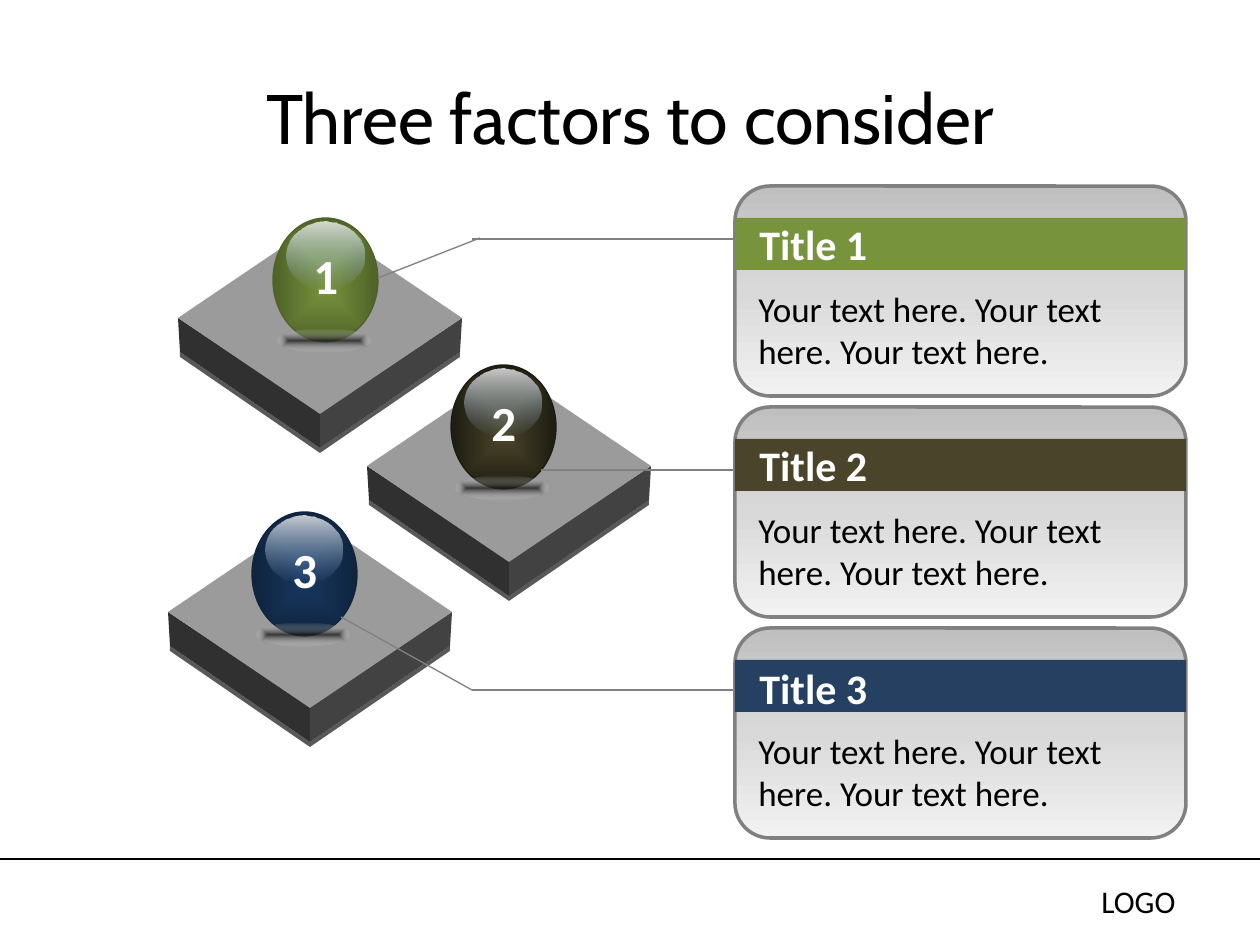
from dataclasses import dataclass

from lxml import etree
from pptx import Presentation
from pptx.dml.color import RGBColor
from pptx.enum.shapes import MSO_CONNECTOR, MSO_SHAPE
from pptx.enum.text import MSO_ANCHOR, MSO_AUTO_SIZE, PP_ALIGN
from pptx.oxml import parse_xml
from pptx.oxml.ns import nsdecls, qn
from pptx.util import Pt

STRAIGHT = MSO_CONNECTOR.STRAIGHT
DIAMOND, OVAL = MSO_SHAPE.DIAMOND, MSO_SHAPE.OVAL
RECTANGLE, ROUNDED = MSO_SHAPE.RECTANGLE, MSO_SHAPE.ROUNDED_RECTANGLE
LEFT, CENTER = PP_ALIGN.LEFT, PP_ALIGN.CENTER
TOP, MIDDLE = MSO_ANCHOR.TOP, MSO_ANCHOR.MIDDLE
FIT_SHAPE, NO_FIT = MSO_AUTO_SIZE.SHAPE_TO_FIT_TEXT, MSO_AUTO_SIZE.NONE
PX = 914400 / 126


@dataclass(frozen=True)
class Theme:
    black: str = "000000"
    white: str = "FFFFFF"
    gray: str = "808080"
    tile_top: str = "9B9B9B"
    tile_left: str = "303030"
    tile_right: str = "424242"
    tile_lip: str = "595959"
    card: tuple = ((0, "BFBFBF", 100), (50, "D9D9D9", 100), (100, "F2F2F2", 100))
    gloss: tuple = ((0, "FFFFFF", 77), (100, "8EB4E3", 0))
    contact: tuple = ((0, "171717", 76), (100, "FFFFFF", 0))
    heading_font: str = "Cabin"
    body_font: str = "Calibri"
    title_size: int = 40
    number_size: int = 28
    heading_size: int = 24
    body_size: int = 20
    footer_size: int = 18


theme = Theme()


def write_text(shape, text, size, color=theme.black, font=theme.body_font,
               bold=False, align=LEFT, anchor=TOP, wrap=True, fit=FIT_SHAPE):
    frame = shape.text_frame
    frame.word_wrap = wrap
    frame.auto_size = fit
    frame.vertical_anchor = anchor
    paragraph = frame.paragraphs[0]
    paragraph.alignment = align
    run = paragraph.add_run()
    run.text = text
    run.font.name = font
    run.font.size = Pt(size)
    run.font.bold = bold
    run.font.color.rgb = RGBColor.from_string(color)


def paint(shape, fill, line=None, line_width=0.75, radial=False):
    shape.shadow.inherit = False
    if isinstance(fill, str):
        shape.fill.solid()
        shape.fill.fore_color.rgb = RGBColor.from_string(fill)
    else:
        stops = "".join(
            f'<a:gs pos="{position * 1000}"><a:srgbClr val="{color}">'
            f'<a:alpha val="{alpha * 1000}"/></a:srgbClr></a:gs>'
            for position, color, alpha in fill)
        direction = '<a:lin ang="5400000" scaled="0"/>'
        if radial:
            direction = ('<a:path path="shape"><a:fillToRect l="50000" t="50000" '
                         'r="50000" b="50000"/></a:path>')
        shape.fill.background()
        properties = shape._element.spPr
        properties.replace(properties.find(qn("a:noFill")), parse_xml(
            f'<a:gradFill {nsdecls("a")} rotWithShape="1">'
            f'<a:gsLst>{stops}</a:gsLst>{direction}</a:gradFill>'))
    if line:
        shape.line.color.rgb = RGBColor.from_string(line)
        shape.line.width = Pt(line_width)
    else:
        shape.line.fill.background()


presentation = Presentation()
presentation.slide_width = round(1260 * PX)
presentation.slide_height = round(945 * PX)
slide = presentation.slides.add_slide(presentation.slide_layouts[5])
shapes = slide.shapes

title = shapes.title
title.left, title.top, title.width, title.height = [
    round(length * PX) for length in (63, 38, 1134, 157)]
write_text(title, "Three factors to consider", theme.title_size,
           font=theme.heading_font, align=CENTER, anchor=MIDDLE, fit=NO_FIT)

footer = shapes.add_textbox(*[round(length * PX) for length in (1089, 876, 140, 50)])
write_text(footer, "LOGO", theme.footer_size)

tile_faces = [
    (theme.tile_lip, [(-140, 34), (0, 130), (140, 34), (140, 39), (0, 135), (-140, 39)]),
    (theme.tile_left, [(-142, 0), (0, 95), (0, 130), (-140, 34)]),
    (theme.tile_right, [(142, 0), (0, 95), (0, 130), (140, 34)]),
]
for center_x, center_y in [(310, 612), (509, 466), (320, 318)]:
    for color, offsets in tile_faces:
        points = [(round((center_x + x) * PX), round((center_y + y) * PX))
                  for x, y in offsets]
        builder = shapes.build_freeform(*points[0], scale=1.0)
        builder.add_line_segments(points[1:], close=True)
        paint(builder.convert_to_shape(), color)
    tile = shapes.add_shape(DIAMOND, *[
        round(length * PX) for length in (center_x - 142, center_y - 96, 284, 192)])
    paint(tile, theme.tile_top)

orbs = [
    (273, 218, "77933C", "4F6228"),
    (451, 365, "4A452A", "1E1C11"),
    (252, 512, "17375E", "0F243E"),
]
for left, top, inner, outer in orbs:
    layers = [
        ((left, top, 105, 124), ((0, inner, 100), (100, outer, 100)), outer, True),
        ((left + 14, top + 4, 77, 67), theme.gloss, None, False),
        ((left + 4, top + 111, 94, 24), theme.contact, None, True),
    ]
    for box, fill, line, radial in layers:
        layer = shapes.add_shape(OVAL, *[round(length * PX) for length in box])
        paint(layer, fill, line, radial=radial)

cards = [
    ("Title 1", "77933C", 212),
    ("Title 2", "4A452A", 433),
    ("Title 3", "254061", 656),
]
for index, (heading, color, heading_top) in enumerate(cards):
    top = 186 + 221 * index
    card = shapes.add_shape(ROUNDED, *[round(length * PX) for length in (735, top, 451, 210)])
    paint(card, theme.card, theme.gray, 2)
    band = shapes.add_shape(RECTANGLE, *[
        round(length * PX) for length in (735, top + 32, 451, 52)])
    paint(band, color)
    body = shapes.add_textbox(*[round(length * PX) for length in (746, top + 95, 431, 97)])
    write_text(body, "Your text here. Your text here. Your text here.", theme.body_size)
    label = shapes.add_textbox(*[round(length * PX) for length in (747, heading_top, 325, 63)])
    write_text(label, heading, theme.heading_size, theme.white, bold=True)

lines = [
    (theme.black, (0, 859, 1260, 859)),
    (theme.gray, (378, 278, 480, 238)),
    (theme.gray, (472, 239, 735, 239)),
    (theme.gray, (541, 470, 735, 470)),
    (theme.gray, (472, 690, 735, 690)),
    (theme.gray, (472, 690, 341, 617)),
]
for color, ends in lines:
    connector = shapes.add_connector(STRAIGHT, *[round(length * PX) for length in ends])
    connector.line.color.rgb = RGBColor.from_string(color)
    connector.line.width = Pt(0.75)
    etree.SubElement(connector._element.spPr, qn("a:effectLst"))

for number, (left, top, inner, outer) in enumerate(orbs, 1):
    label = shapes.add_textbox(*[
        round(length * PX) for length in (left + 28, top + 21, 50, 72)])
    write_text(label, str(number), theme.number_size, theme.white, bold=True, wrap=False)

presentation.save("out.pptx")
